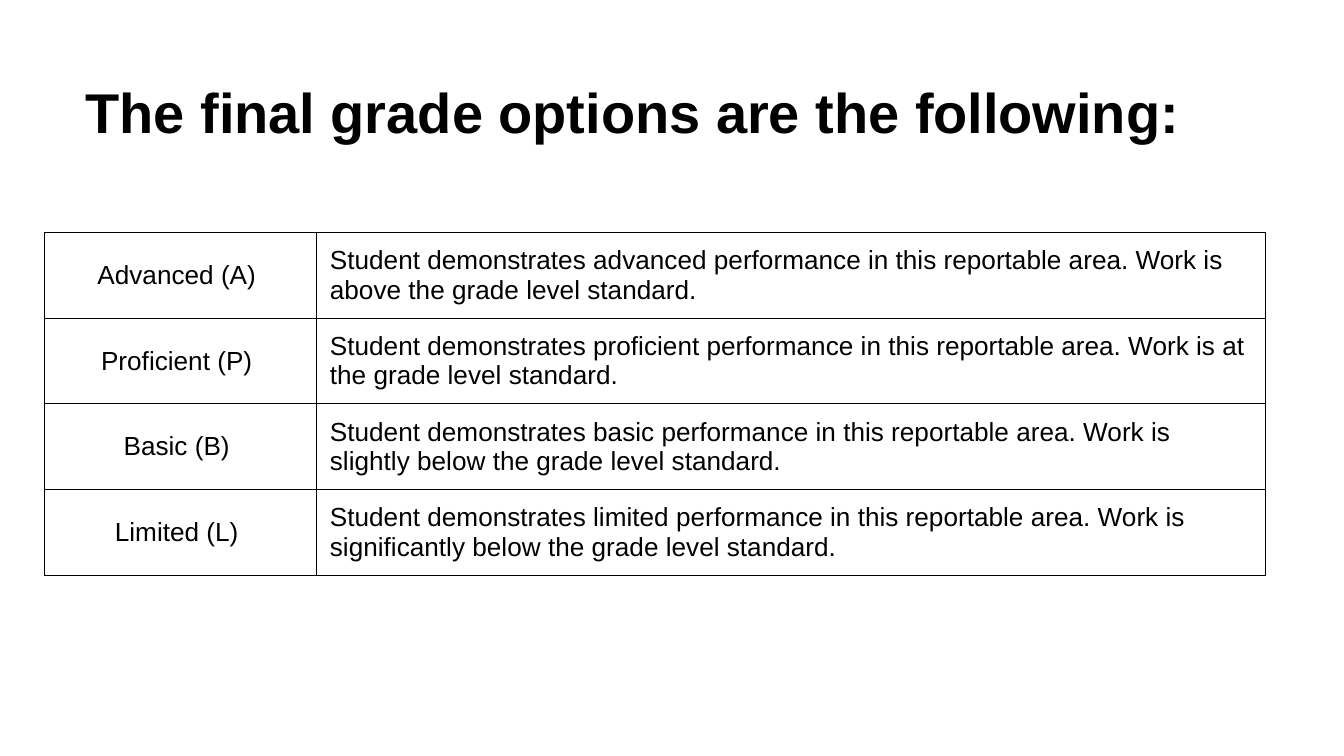
from dataclasses import dataclass

from lxml import etree
from pptx import Presentation
from pptx import util as u
from pptx.dml.color import RGBColor
from pptx.enum import text
from pptx.oxml.ns import qn

SCALE = 4572  # EMU per px, 200 px to the inch


@dataclass(frozen=True)
class Theme:
    ink: str = "000000"
    paper: str = "FFFFFF"
    font: str = "Arial"
    title: int = 30
    body: int = 14
    rule: float = 0.75
    pad: int = 20


@dataclass(frozen=True)
class Grade:
    label: str
    level: str
    place: str

    @property
    def detail(self) -> str:
        return (f"Student demonstrates {self.level} performance in this "
                f"reportable area. Work is {self.place} the grade level standard.")


THEME = Theme()
GRADES = [
    Grade("Advanced (A) ", "advanced", "above"),
    Grade("Proficient (P) ", "proficient", "at"),
    Grade("Basic (B) ", "basic", "slightly below"),
    Grade("Limited (L) ", "limited", "significantly below"),
]


def px(n: int) -> u.Emu:
    return u.Emu(n * SCALE)


def write(frame, words: str, *, size: int, bold: bool = False,
          align=text.PP_ALIGN.LEFT) -> None:
    para = frame.paragraphs[0]
    para.alignment = align
    run = para.add_run()
    run.text = words
    run.font.name = THEME.font
    run.font.size = u.Pt(size)
    run.font.bold = bold
    run.font.color.rgb = RGBColor.from_string(THEME.ink)


def pad(box) -> None:
    box.margin_left = box.margin_right = px(THEME.pad)
    box.margin_top = box.margin_bottom = px(THEME.pad)


def rule(cell) -> None:
    """Draw a thin line on all four sides, ahead of the cell's fill."""
    props = cell._tc.get_or_add_tcPr()
    for i, side in enumerate(("lnL", "lnR", "lnT", "lnB")):
        line = etree.Element(qn(f"a:{side}"), w=str(int(u.Pt(THEME.rule))))
        fill = etree.SubElement(line, qn("a:solidFill"))
        etree.SubElement(fill, qn("a:srgbClr"), val=THEME.ink)
        props.insert(i, line)


def fill_cell(cell, words: str, align) -> None:
    cell.fill.background()
    cell.vertical_anchor = text.MSO_ANCHOR.MIDDLE
    pad(cell)
    write(cell.text_frame, words, size=THEME.body, align=align)
    rule(cell)


def add_title(slide, words: str) -> None:
    title = slide.shapes.title
    title.left, title.top, title.width, title.height = map(px, (103, 96, 1678, 176))
    frame = title.text_frame
    frame.word_wrap = True
    frame.auto_size = text.MSO_AUTO_SIZE.NONE
    frame.vertical_anchor = text.MSO_ANCHOR.TOP
    pad(frame)
    write(frame, words, size=THEME.title, bold=True, align=text.PP_ALIGN.CENTER)


def add_grades(slide, grades: list[Grade]) -> None:
    frame = slide.shapes.add_table(len(grades), 2, *map(px, (66, 346, 1817, 534)))
    table = frame.table
    table.first_row = table.horz_banding = False
    for col, wide in zip(table.columns, (405, 1412)):
        col.width = px(wide)
    for row, grade in zip(table.rows, grades):
        row.height = px(84)  # rows grow to fit two lines
        fill_cell(row.cells[0], grade.label, text.PP_ALIGN.CENTER)
        fill_cell(row.cells[1], grade.detail, text.PP_ALIGN.LEFT)
    frame.height = px(534)


def main() -> None:
    # Page
    deck = Presentation()
    deck.slide_width, deck.slide_height = px(2000), px(1125)
    slide = deck.slides.add_slide(deck.slide_layouts[5])
    back = slide.background.fill
    back.solid()
    back.fore_color.rgb = RGBColor.from_string(THEME.paper)

    # Title and grade table
    add_title(slide, "The final grade options are the following: ")
    add_grades(slide, GRADES)
    deck.save("out.pptx")


if __name__ == "__main__":
    main()
